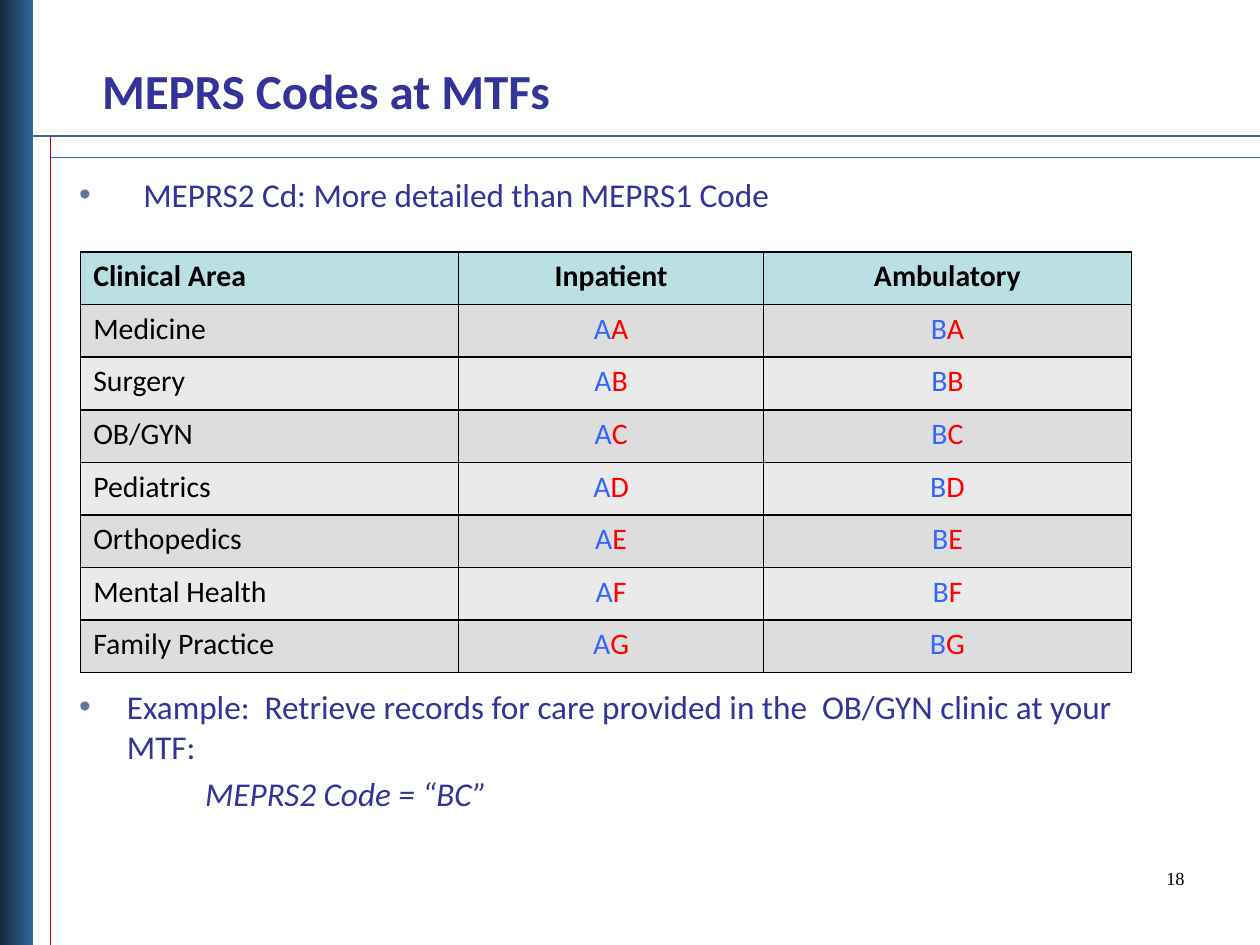
import pptx
import pptx.util
import pptx.dml.color
import pptx.enum.shapes
import pptx.enum.text
import pptx.oxml
import pptx.oxml.ns

WIDE = pptx.util.Inches(10)
HIGH = pptx.util.Inches(7.5)
FACE = "Calibri"
INK = "333399"
BLUE = "336699"
ALIGN = pptx.enum.text.PP_ALIGN
AREAS = ["Medicine", "Surgery", "OB/GYN", "Pediatrics", "Orthopedics",
         "Mental Health", "Family Practice"]


def across(share):
    return round(WIDE * share / 100)


def down(share):
    return round(HIGH * share / 100)


def frame(x, y, w, h):
    return across(x), down(y), across(w), down(h)


def color(code):
    return pptx.dml.color.RGBColor.from_string(code)


def style(font, size, code, face=FACE, bold=False):
    font.size = pptx.util.Pt(size)
    font.name = face
    font.bold = bold
    font.color.rgb = color(code)


def add_rule(slide, start, end, code, width):
    rule = slide.shapes.add_connector(
        pptx.enum.shapes.MSO_CONNECTOR.STRAIGHT,
        across(start[0]), down(start[1]), across(end[0]), down(end[1]))
    rule.line.color.rgb = color(code)
    rule.line.width = pptx.util.Pt(width)
    props = rule._element.spPr
    props.append(props.makeelement(pptx.oxml.ns.qn("a:effectLst"), {}))


def add_band(slide):
    band = slide.shapes.add_shape(
        pptx.enum.shapes.MSO_SHAPE.RECTANGLE, *frame(0, 0, 2.6, 100))
    band.shadow.inherit = False
    band.line.fill.background()
    band.fill.gradient()
    band.fill.gradient_angle = 0
    for stop, code, place in zip(band.fill.gradient_stops, ["14293D", BLUE], [0, 1]):
        stop.color.rgb = color(code)
        stop.position = place


def add_title(slide, text):
    title = slide.shapes.title
    title.left, title.top, title.width, title.height = frame(7.1, 0, 85, 13.33)
    body = title.text_frame
    body.text = text
    body.vertical_anchor = pptx.enum.text.MSO_ANCHOR.BOTTOM
    line = body.paragraphs[0]
    line.alignment = ALIGN.LEFT
    style(line.font, 28, INK, bold=True)


def add_text(slide, place, lines):
    body = slide.shapes.add_textbox(*frame(*place)).text_frame
    body.word_wrap = True
    body.text = "\n".join(lines)
    return body.paragraphs


def indent(line, left, hang=0):
    props = line._p.get_or_add_pPr()
    props.set("marL", str(pptx.util.Inches(left)))
    props.set("indent", str(-pptx.util.Inches(hang)))
    return props


def add_dot(line, left):
    props = indent(line, left, left)
    space = pptx.oxml.ns.nsdecls("a")
    for tag in ('<a:buClr %s><a:srgbClr val="6472A3"/></a:buClr>',
                '<a:buFont %s typeface="Arial"/>',
                '<a:buChar %s char="•"/>'):
        props.append(pptx.oxml.parse_xml(tag % space))


def edge(cell):
    props = cell._tc.get_or_add_tcPr()
    for side in "LRTB":
        props.append(pptx.oxml.parse_xml(
            f'<a:ln{side} {pptx.oxml.ns.nsdecls("a")} w="12700"><a:solidFill>'
            f'<a:srgbClr val="000000"/></a:solidFill></a:ln{side}>'))


def fill_cell(cell, parts, back, bold, center):
    edge(cell)
    cell.fill.solid()
    cell.fill.fore_color.rgb = color(back)
    line = cell.text_frame.paragraphs[0]
    line.alignment = ALIGN.CENTER if center else ALIGN.LEFT
    for text, code in parts:
        run = line.add_run()
        run.text = text
        style(run.font, 17, code, bold=bold)


def add_codes(slide):
    heads = ["Clinical Area", "Inpatient", "Ambulatory"]
    rows = [[[(head, "000000")] for head in heads]]
    for area, code in zip(AREAS, "ABCDEFG"):
        pairs = [[(kind, "3366FF"), (code, "FF0000")] for kind in "AB"]
        rows.append([[(area, "000000")]] + pairs)
    table = slide.shapes.add_table(
        len(rows), len(heads), *frame(6.4, 26.67, 83.4, 44.53)).table
    for column, share in zip(table.columns, [30, 24.2, 29.2]):
        column.width = across(share)
    for r, row in enumerate(rows):
        back = "BBE0E3" if r == 0 else ["EAEAEA", "DDDDDD"][r % 2]
        for c, parts in enumerate(row):
            fill_cell(table.cell(r, c), parts, back, r == 0, c > 0)


def add_notes(slide):
    head = add_text(slide, (5.3, 17.73, 86.6, 6),
                    ["MEPRS2 Cd: More detailed than MEPRS1 Code"])
    tail = add_text(slide, (5.3, 72, 86.6, 15), [
        "Example:  Retrieve records for care provided in the  OB/GYN clinic at your MTF:",
        "MEPRS2 Code = “BC”"])
    for line in head + tail:
        style(line.font, 19, INK)
    add_dot(head[0], 0.51)
    add_dot(tail[0], 0.38)
    indent(tail[1], 1)
    tail[1].space_before = pptx.util.Pt(4)
    tail[1].font.italic = True


def add_number(slide, text):
    line = add_text(slide, (71.7, 91.07, 23.3, 6.93), [text])[0]
    line.alignment = ALIGN.RIGHT
    style(line.font, 10.5, "000000", "Times New Roman")


def main():
    deck = pptx.Presentation()
    deck.slide_width, deck.slide_height = WIDE, HIGH
    slide = deck.slides.add_slide(deck.slide_layouts[5])
    add_rule(slide, (4, 16.67), (100, 16.67), BLUE, 1)
    add_rule(slide, (4, 14.4), (4, 100), "CC0000", 0.75)
    add_rule(slide, (0, 14.4), (100, 14.4), BLUE, 1.5)
    add_band(slide)
    add_codes(slide)
    add_title(slide, "MEPRS Codes at MTFs")
    add_notes(slide)
    add_number(slide, "18")
    deck.save("out.pptx")


if __name__ == "__main__":
    main()
